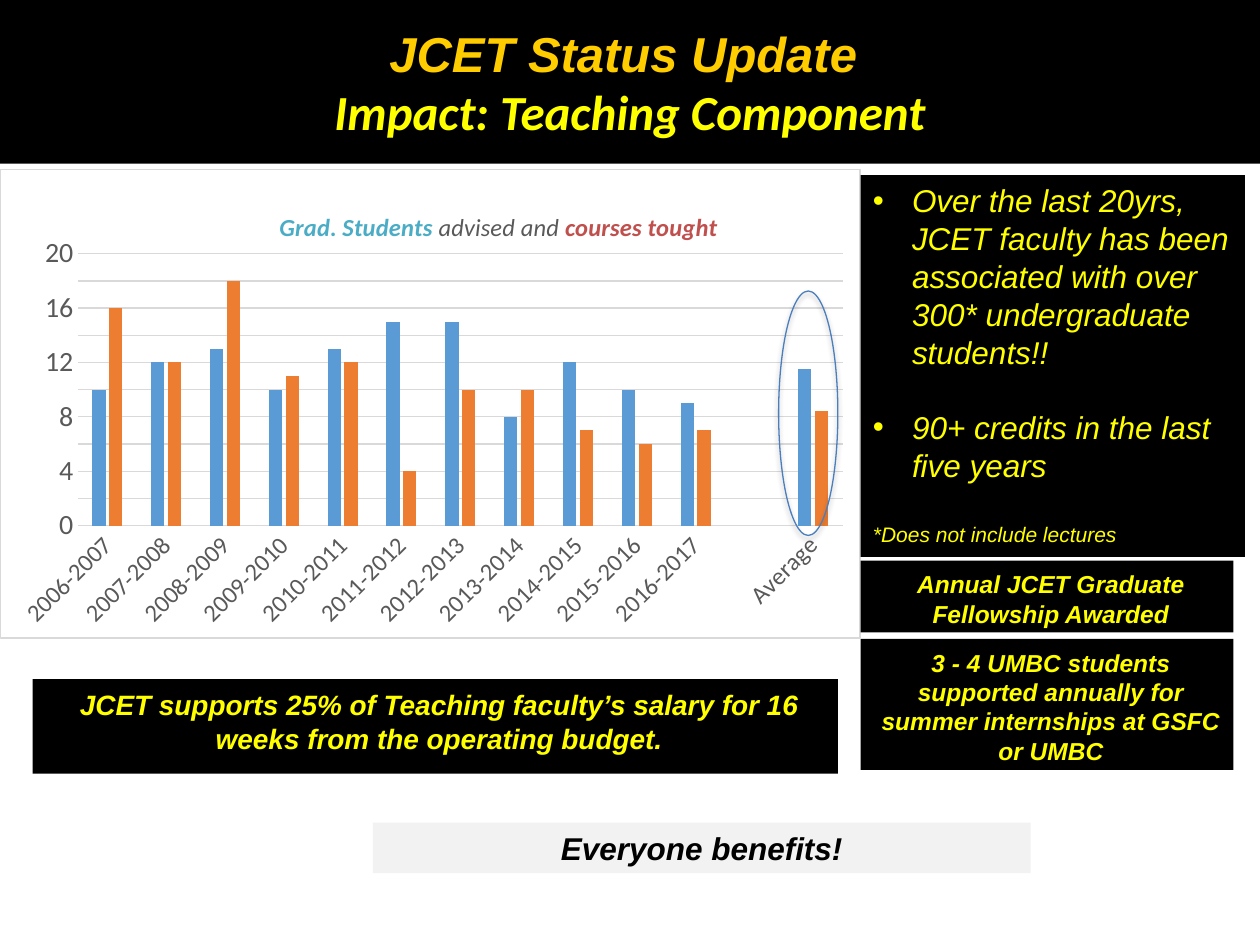
import pptx
import pptx.chart.data
import pptx.dml.color
import pptx.enum.chart
import pptx.enum.shapes
import pptx.enum.text
import pptx.oxml
import pptx.util
from pptx.util import Inches, Pt

CENTER = pptx.enum.text.PP_ALIGN.CENTER
LEFT = pptx.enum.text.PP_ALIGN.LEFT
SHAPES = pptx.enum.shapes.MSO_SHAPE
NAMESPACES = ('xmlns:a="http://schemas.openxmlformats.org/drawingml/2006/main" '
              'xmlns:c="http://schemas.openxmlformats.org/drawingml/2006/chart"')
GRID_LINE = ('<a:ln w="9525"><a:solidFill><a:srgbClr val="D9D9D9"/>'
             '</a:solidFill></a:ln>')

YEARS = [f"{year}-{year + 1}" for year in range(2006, 2017)] + ["", "Average"]
SERIES = [
    ("Series 1", "5B9BD5", [10, 12, 13, 10, 13, 15, 15, 8, 12, 10, 9, None, 11.5]),
    ("Series 2", "ED7D31", [16, 12, 18, 11, 12, 4, 10, 10, 7, 6, 7, None, 8.4]),
]
CHART_TITLE = [("Grad. Students", "4BACC6", True), (" advised and ", "595959", False),
               ("courses tought", "C0504D", True)]
HEADING = [("JCET Status Update ", "Arial", "FFCC00"),
           ("Impact: Teaching Component", "Calibri", "FFFF00")]
NOTES = [
    ("Over the last 20yrs, JCET faculty has been associated with over 300* "
     "undergraduate students!!", 18, True),
    ("90+ credits in the last five years", 18, True),
    ("*Does not include lectures", 12, False),
]
PANELS = [
    ("JCET supports 25% of Teaching faculty’s salary for 16 weeks from the operating budget.",
     (0.26, 5.39, 6.39, 0.75), 16, "000000", "FFFF00", (0.16, 0.07)),
    ("Annual JCET Graduate Fellowship Awarded",
     (6.83, 4.45, 2.96, 0.57), 14, "000000", "FFFF00", (0.16, 0.07)),
    ("3 - 4 UMBC students supported annually for summer internships at GSFC or UMBC",
     (6.83, 5.07, 2.96, 1.04), 14, "000000", "FFFF00", (0.16, 0.07)),
    ("Everyone benefits!",
     (2.96, 6.53, 5.22, 0.4), 18, "F2F2F2", "000000", (0.1, 0.05)),
]


def rgb(value):
    return pptx.dml.color.RGBColor.from_string(value)


def xml(tag, inner="", **attributes):
    settings = " ".join(f'{name}="{value}"' for name, value in attributes.items())
    return pptx.oxml.parse_xml(f"<{tag} {NAMESPACES} {settings}>{inner}</{tag}>")


def set_font(font, color, **values):
    for name, value in values.items():
        setattr(font, name, value)
    font.color.rgb = rgb(color)


def add_box(slide, box, fill, kind=SHAPES.RECTANGLE):
    shape = slide.shapes.add_shape(kind, *map(Inches, box))
    shape.shadow.inherit = False
    if fill:
        shape.fill.solid()
        shape.fill.fore_color.rgb = rgb(fill)
    else:
        shape.fill.background()
    shape.line.fill.background()
    frame = shape.text_frame
    frame.word_wrap = True
    frame.vertical_anchor = pptx.enum.text.MSO_ANCHOR.TOP
    return shape


def add_paragraph(frame, index, text, alignment):
    paragraph = frame.add_paragraph() if index else frame.paragraphs[0]
    paragraph.alignment = alignment
    run = paragraph.add_run()
    run.text = text
    return paragraph, run.font


def add_heading(slide):
    add_box(slide, (0, 0, 10, 1.3), "000000")
    heading = slide.shapes.add_textbox(*map(Inches, (0, 0.01, 10, 1.28)))
    frame = heading.text_frame
    frame.word_wrap = True
    frame.vertical_anchor = pptx.enum.text.MSO_ANCHOR.MIDDLE
    for index, (text, name, color) in enumerate(HEADING):
        font = add_paragraph(frame, index, text, CENTER)[1]
        set_font(font, color, name=name, size=Pt(28), bold=True, italic=True)


def add_notes(slide):
    frame = add_box(slide, (6.83, 1.39, 3.05, 3.03), "000000").text_frame
    for index, (text, size, bulleted) in enumerate(NOTES):
        paragraph, font = add_paragraph(frame, index, text, LEFT)
        if index:
            paragraph.space_before = Pt(21.5)
        if bulleted:
            properties = paragraph._p.get_or_add_pPr()
            properties.set("marL", str(Inches(0.31)))
            properties.set("indent", str(Inches(-0.31)))
            properties.append(xml("a:buFont", typeface="Arial"))
            properties.append(xml("a:buChar", char="•"))
        set_font(font, "FFFF00", name="Arial", size=Pt(size), italic=True)


def add_panels(slide):
    for text, box, size, fill, color, (left, top) in PANELS:
        frame = add_box(slide, box, fill).text_frame
        frame.margin_left, frame.margin_top = Inches(left), Inches(top)
        font = add_paragraph(frame, 0, text, CENTER)[1]
        set_font(font, color, name="Arial", size=Pt(size), bold=True, italic=True)


def set_layout(element, position, places, target=""):
    modes = "".join(f'<c:{axis}Mode val="edge"/>' for axis in "xy")
    values = "".join(f'<c:{name} val="{value}"/>' for name, value in places.items())
    layout = xml("c:layout", f"<c:manualLayout>{target}{modes}{values}</c:manualLayout>")
    for previous in element.findall(layout.tag):
        element.remove(previous)
    element.insert(position, layout)


def add_chart_title(chart):
    title = chart.chart_title
    paragraph = title.text_frame.paragraphs[0]
    for text, color, bold in CHART_TITLE:
        run = paragraph.add_run()
        run.text = text
        set_font(run.font, color, name="Calibri", size=Pt(14), bold=bold, italic=True)
    set_layout(title._element, 1, {"x": 0.32, "y": 0.08})


def format_axes(chart):
    for axis, size in ((chart.category_axis, 14), (chart.value_axis, 16)):
        axis.major_tick_mark = pptx.enum.chart.XL_TICK_MARK.NONE
        axis.minor_tick_mark = pptx.enum.chart.XL_TICK_MARK.NONE
        set_font(axis.tick_labels.font, "595959", name="Calibri", size=Pt(size))
    chart.category_axis._element.txPr.bodyPr.set("rot", "-2700000")
    axis = chart.value_axis
    for name, value in dict(minimum_scale=0, maximum_scale=20, major_unit=4, minor_unit=2,
                            has_major_gridlines=True, has_minor_gridlines=True).items():
        setattr(axis, name, value)
    axis.format.line.fill.background()
    for line in (chart.category_axis.format.line, axis.major_gridlines.format.line):
        line.color.rgb = rgb("D9D9D9")
        line.width = Pt(0.75)
    axis._element.minorGridlines.append(xml("c:spPr", GRID_LINE))


def add_chart(slide):
    data = pptx.chart.data.CategoryChartData()
    data.categories = YEARS
    for name, _, values in SERIES:
        data.add_series(name, values)
    chart = slide.shapes.add_chart(pptx.enum.chart.XL_CHART_TYPE.COLUMN_CLUSTERED,
                                   *map(Inches, (0, 1.34, 6.83, 3.73)), data).chart
    set_font(chart.font, "000000", name="Calibri", size=Pt(10))
    chart.has_legend = False
    plot = chart.plots[0]
    for name, value in dict(gap_width=219, overlap=-27, vary_by_categories=False).items():
        setattr(plot, name, value)
    for series, (_, color, _) in zip(plot.series, SERIES):
        series.format.fill.solid()
        series.format.fill.fore_color.rgb = rgb(color)
    add_chart_title(chart)
    format_axes(chart)
    set_layout(chart._chartSpace.chart.plotArea, 0,
               {"x": 0.09, "y": 0.18, "w": 0.89, "h": 0.58},
               '<c:layoutTarget val="inner"/>')
    chart._chartSpace.chart.addnext(xml(
        "c:spPr", f'<a:solidFill><a:srgbClr val="FFFFFF"/></a:solidFill>{GRID_LINE}'))


def add_average_ring(slide):
    ring = add_box(slide, (6.18, 2.31, 0.47, 1.94), None, SHAPES.OVAL)
    ring.line.color.rgb = rgb("4B7EBC")
    ring.line.width = Pt(0.75)
    ring._element.spPr.effectLst.append(xml(
        "a:outerShdw", '<a:srgbClr val="000000"><a:alpha val="35000"/></a:srgbClr>',
        blurRad=Pt(3.1), dist=Pt(1.8), dir=5400000, rotWithShape=0))


def main():
    presentation = pptx.Presentation()
    presentation.slide_width, presentation.slide_height = Inches(10), Inches(7.5)
    slide = presentation.slides.add_slide(presentation.slide_layouts[6])
    for build in (add_heading, add_chart, add_notes, add_panels, add_average_ring):
        build(slide)
    presentation.save("out.pptx")


if __name__ == "__main__":
    main()
